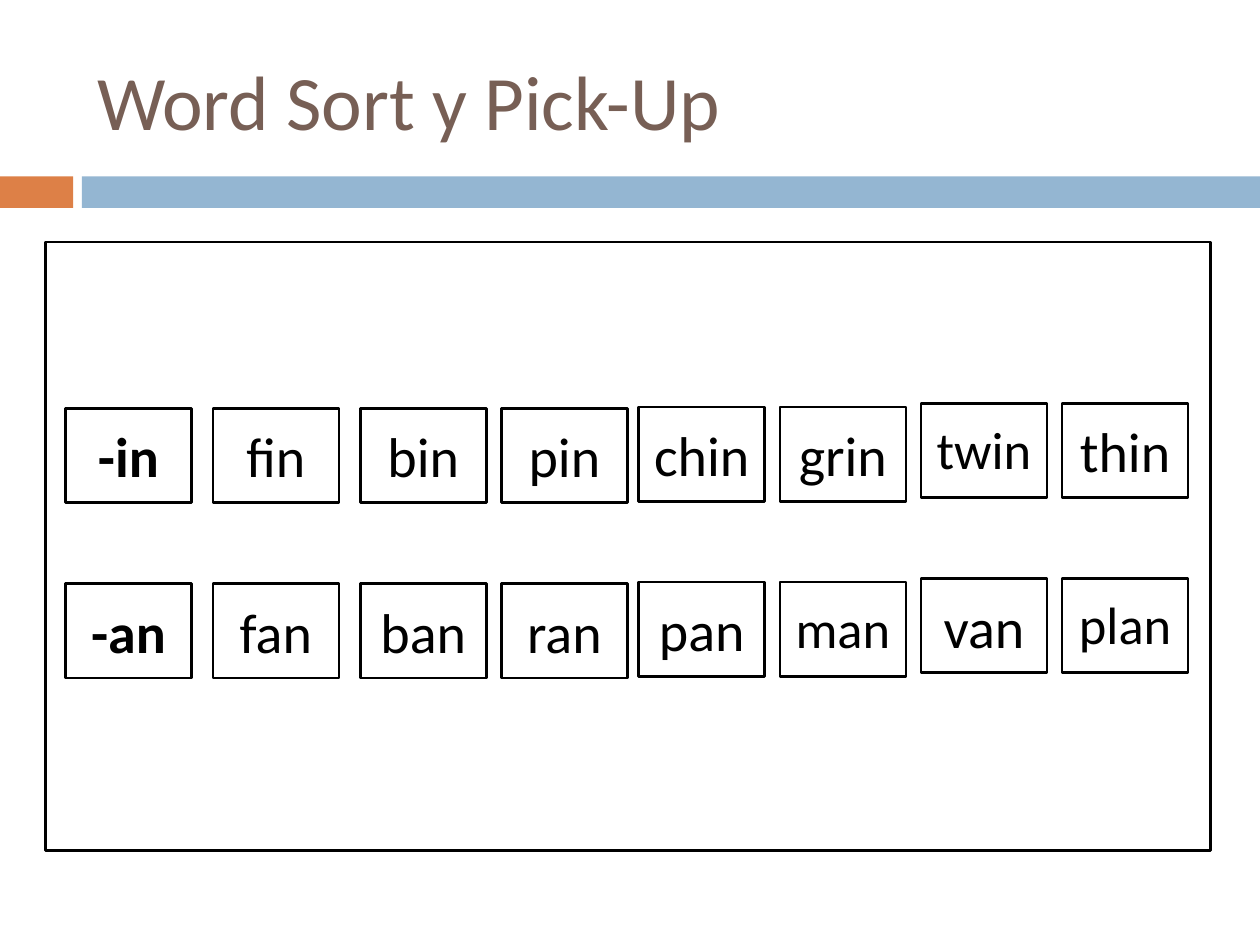
from pptx import Presentation
from pptx.dml.color import RGBColor
from pptx.enum.shapes import MSO_SHAPE
from pptx.enum.text import MSO_ANCHOR, MSO_AUTO_SIZE, PP_ALIGN
from pptx.util import Inches, Pt

FONT = "Calibri"
BLACK, BROWN, ORANGE, BLUE = "000000", "775F55", "DD8047", "94B6D2"

# Card grid: column lefts, and the small lift of each column
CARD_W, CARD_H = 1, 0.75
COLUMNS = [0.52, 1.69, 2.86, 3.98, 5.07, 6.19, 7.31, 8.43]
LIFTS = [0, 0, 0, 0, 0.01, 0.01, 0.04, 0.04]
FIRST_ROW, ROW_STEP = 3.24, 1.39
WORDS = [
    ["-in", "fin", "bin", "pin", "chin", "grin", "twin", "thin"],
    ["-an", "fan", "ban", "ran", "pan", "man", "van", "plan"],
]
SMALLER = {"twin", "man", "plan"}


def color(value):
    return RGBColor.from_string(value)


def add_rect(s, x, y, w, h, fill=None, line=None):
    sp = s.shapes.add_shape(MSO_SHAPE.RECTANGLE, Inches(x), Inches(y),
                            Inches(w), Inches(h))
    sp.shadow.inherit = False
    if fill:
        sp.fill.solid()
        sp.fill.fore_color.rgb = color(fill)
    else:
        sp.fill.background()
    if line:
        sp.line.color.rgb = color(line)
        sp.line.width = Pt(1.5)
    else:
        sp.line.fill.background()
    return sp


def write(tf, text, size, hue, align, bold=False):
    tf.text = text
    tf.word_wrap = True
    p = tf.paragraphs[0]
    p.alignment = align
    font = p.runs[0].font
    font.name, font.size, font.bold = FONT, Pt(size), bold
    font.color.rgb = color(hue)


def add_header(s, x, y, w, h):
    # Two-colour band below the title
    add_rect(s, 0, 1.4, 0.58, 0.25, fill=ORANGE)
    add_rect(s, 0.65, 1.4, 9.35, 0.25, fill=BLUE)
    title = s.shapes.title
    title.left, title.top = Inches(x), Inches(y)
    title.width, title.height = Inches(w), Inches(h)
    write(title.text_frame, "Word Sort y Pick-Up", 44, BROWN, PP_ALIGN.LEFT)
    title.text_frame.vertical_anchor = MSO_ANCHOR.MIDDLE


def add_card(s, x, y, word):
    add_rect(s, x, y, CARD_W, CARD_H, line=BLACK)
    size, h = (30, 0.61) if word in SMALLER else (32, 0.64)
    box = s.shapes.add_textbox(Inches(x), Inches(y + 0.06),
                               Inches(CARD_W), Inches(h))
    write(box.text_frame, word, size, BLACK, PP_ALIGN.CENTER,
          bold=word.startswith("-"))
    box.text_frame.auto_size = MSO_AUTO_SIZE.SHAPE_TO_FIT_TEXT


def add_board(s, x, y, w, h):
    add_rect(s, x, y, w, h, line=BLACK)
    for row, words in enumerate(WORDS):
        top = FIRST_ROW + row * ROW_STEP
        for left, lift, word in zip(COLUMNS, LIFTS, words):
            add_card(s, left, top - lift, word)


def main():
    prs = Presentation()
    prs.slide_width, prs.slide_height = Inches(10), Inches(7.5)
    s = prs.slides.add_slide(prs.slide_layouts[5])
    add_header(s, 0.67, 0.25, 8.92, 1.08)
    add_board(s, 0.36, 1.92, 9.25, 4.83)
    prs.save("out.pptx")


if __name__ == "__main__":
    main()
